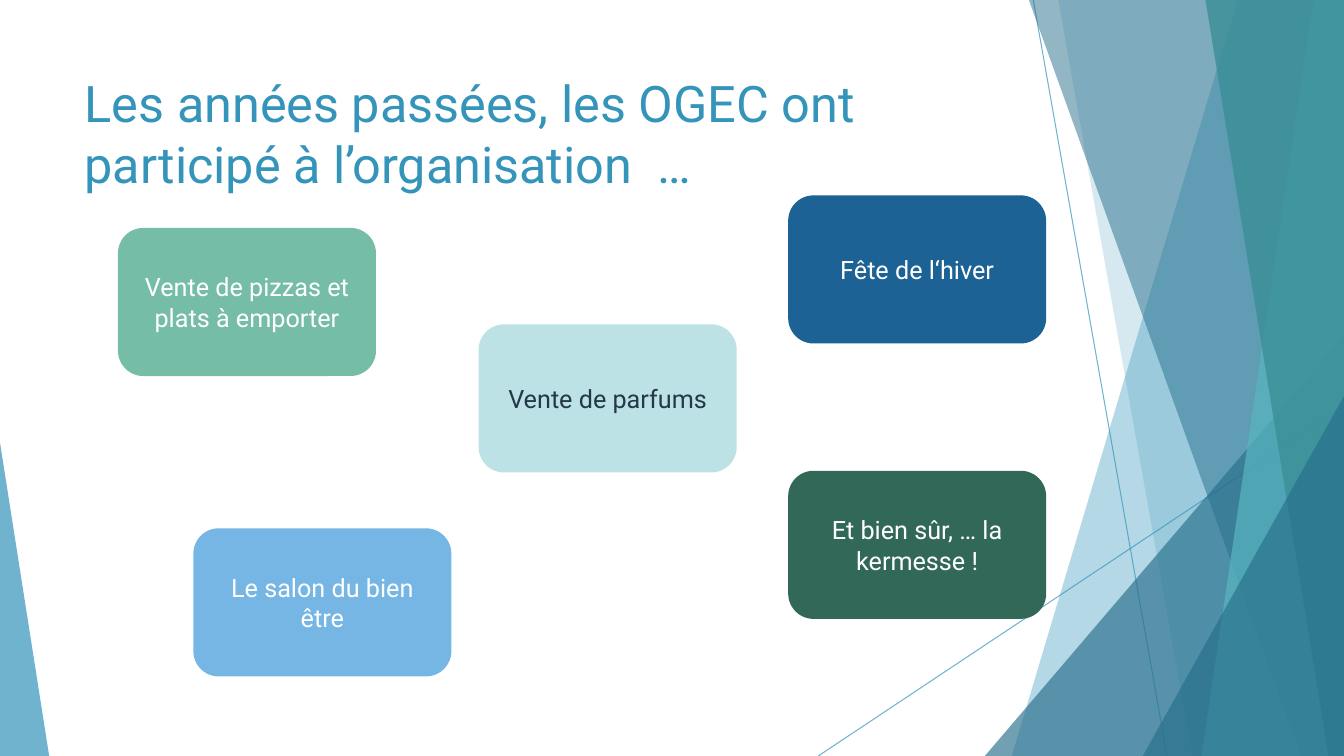
"""Build the slide listing the events the OGEC helped to organise."""
from dataclasses import dataclass

from lxml.etree import SubElement
from pptx import Presentation
from pptx.dml.color import RGBColor
from pptx.dml.fill import FillFormat
from pptx.enum.shapes import MSO_CONNECTOR, MSO_SHAPE
from pptx.enum.text import MSO_ANCHOR, MSO_AUTO_SIZE, PP_ALIGN
from pptx.oxml.ns import qn
from pptx.shapes.autoshape import Shape
from pptx.shapes.shapetree import SlideShapes
from pptx.text.text import TextFrame
from pptx.util import Cm, Pt

BLUE = RGBColor(0x34, 0x94, 0xBA)
DEEP_BLUE = RGBColor(0x27, 0x6F, 0x8B)
TURQUOISE = RGBColor(0x58, 0xB6, 0xC0)
DARK_TURQUOISE = RGBColor(0x3A, 0x8F, 0x98)
PALE_TURQUOISE = RGBColor(0xBC, 0xE2, 0xE6)
NAVY = RGBColor(0x1D, 0x62, 0x94)
SKY = RGBColor(0x75, 0xB6, 0xE5)
MINT = RGBColor(0x75, 0xBD, 0xA7)
FOREST = RGBColor(0x31, 0x68, 0x57)
INK = RGBColor(0x25, 0x38, 0x48)
WHITE = RGBColor(0xFF, 0xFF, 0xFF)

FONT = "Roboto"
SLIDE_WIDTH, SLIDE_HEIGHT = 33.87, 19.05
EVENT_WIDTH, EVENT_HEIGHT = 6.45, 3.68


@dataclass(frozen=True)
class Ray:
    """A thin line crossing the decoration, in centimetres."""
    start: tuple[float, float]
    end: tuple[float, float]


@dataclass(frozen=True)
class Band:
    """A full-height panel reaching the right edge, with a slanted left side."""
    top_left: float
    bottom_left: float
    color: RGBColor
    opacity: int


@dataclass(frozen=True)
class Corner:
    """A right-angled triangle standing on the bottom edge."""
    left: float
    width: float
    height: float
    apex: float
    color: RGBColor
    opacity: int


@dataclass(frozen=True)
class Event:
    """A rounded card naming one event."""
    label: str
    left: float
    top: float
    color: RGBColor
    text_color: RGBColor = WHITE


RAYS = [
    Ray((26.04, 0), (29.41, SLIDE_HEIGHT)),
    Ray((SLIDE_WIDTH, 10.24), (20.62, SLIDE_HEIGHT)),
]
FACETS = [
    Band(31.19, 25.5, BLUE, 36),
    Band(26.67, 30.05, BLUE, 20),
    Corner(24.82, 9.05, 10.59, 1, DEEP_BLUE, 66),
    Band(25.93, 32.79, DEEP_BLUE, 50),
    Band(33.1, 30.28, TURQUOISE, 70),
    Band(30.38, 33.48, DARK_TURQUOISE, 80),
    Corner(28.8, 5.07, 9.07, 1, DEEP_BLUE, 66),
    Corner(0, 1.24, 7.9, 0, BLUE, 70),
]
EVENTS = [
    Event("Vente de parfums", 12.09, 8.2, PALE_TURQUOISE, INK),
    Event("Fête de l‘hiver", 19.89, 4.95, NAVY),
    Event("Le salon du bien être", 4.9, 13.34, SKY),
    Event("Vente de pizzas et plats à emporter", 3, 5.77, MINT),
    Event("Et bien sûr, … la kermesse !", 19.89, 11.89, FOREST),
]


def paint(fill: FillFormat, color: RGBColor, holder, opacity: int) -> None:
    """Fill with a colour and set its opacity in percent."""
    fill.solid()
    fill.fore_color.rgb = color
    color_element = next(holder.iter(qn("a:srgbClr")))
    SubElement(color_element, qn("a:alpha")).set("val", str(opacity * 1000))


def write(frame: TextFrame, text: str, *, size: int, color: RGBColor,
          align: PP_ALIGN, anchor: MSO_ANCHOR) -> None:
    """Put formatted text into a frame."""
    frame.word_wrap = True
    frame.auto_size = MSO_AUTO_SIZE.NONE
    frame.vertical_anchor = anchor
    paragraph = frame.paragraphs[0]
    paragraph.alignment = align
    run = paragraph.add_run()
    run.text = text
    run.font.name = FONT
    run.font.size = Pt(size)
    run.font.color.rgb = color


def draw_ray(shapes: SlideShapes, ray: Ray) -> None:
    """Draw a thin translucent line."""
    points = [Cm(value) for value in (*ray.start, *ray.end)]
    connector = shapes.add_connector(MSO_CONNECTOR.STRAIGHT, *points)
    connector.line.width = Pt(0.75)
    properties = connector.element.spPr
    paint(connector.line.fill, BLUE, properties, 70)
    SubElement(properties, qn("a:effectLst"))


def outline_band(shapes: SlideShapes, band: Band) -> Shape:
    """Outline a slanted panel."""
    right, bottom = Cm(SLIDE_WIDTH), Cm(SLIDE_HEIGHT)
    builder = shapes.build_freeform(Cm(band.top_left), 0)
    builder.add_line_segments(
        [(right, 0), (right, bottom), (Cm(band.bottom_left), bottom)], close=True)
    return builder.convert_to_shape()


def outline_corner(shapes: SlideShapes, corner: Corner) -> Shape:
    """Outline a triangle on the bottom edge."""
    triangle = shapes.add_shape(
        MSO_SHAPE.ISOSCELES_TRIANGLE, Cm(corner.left),
        Cm(SLIDE_HEIGHT - corner.height), Cm(corner.width), Cm(corner.height))
    triangle.adjustments[0] = corner.apex
    return triangle


def draw_facet(shapes: SlideShapes, facet: Band | Corner) -> None:
    """Draw one translucent piece of the decoration."""
    outline = outline_band if isinstance(facet, Band) else outline_corner
    piece = outline(shapes, facet)
    piece.shadow.inherit = False
    paint(piece.fill, facet.color, piece.element.spPr, facet.opacity)
    piece.line.fill.background()


def draw_event(shapes: SlideShapes, event: Event) -> None:
    """Draw one event card."""
    card = shapes.add_shape(
        MSO_SHAPE.ROUNDED_RECTANGLE, Cm(event.left), Cm(event.top),
        Cm(EVENT_WIDTH), Cm(EVENT_HEIGHT))
    card.shadow.inherit = False
    card.fill.solid()
    card.fill.fore_color.rgb = event.color
    card.line.color.rgb = event.color
    card.line.width = Pt(1.5)
    write(card.text_frame, event.label, size=18, color=event.text_color,
          align=PP_ALIGN.CENTER, anchor=MSO_ANCHOR.MIDDLE)


def main() -> None:
    """Build and save the slide."""
    presentation = Presentation()
    presentation.slide_width = Cm(SLIDE_WIDTH)
    presentation.slide_height = Cm(SLIDE_HEIGHT)
    slide = presentation.slides.add_slide(presentation.slide_layouts[5])
    shapes = slide.shapes

    heading = shapes.title
    heading.left, heading.top = Cm(1.88), Cm(1.7)
    heading.width, heading.height = Cm(23.88), Cm(3.66)
    write(heading.text_frame,
          "Les années passées, les OGEC ont participé à l’organisation  …",
          size=36, color=BLUE, align=PP_ALIGN.LEFT, anchor=MSO_ANCHOR.TOP)

    for ray in RAYS:
        draw_ray(shapes, ray)
    for facet in FACETS:
        draw_facet(shapes, facet)
    for event in EVENTS:
        draw_event(shapes, event)
    presentation.save("out.pptx")


if __name__ == "__main__":
    main()
